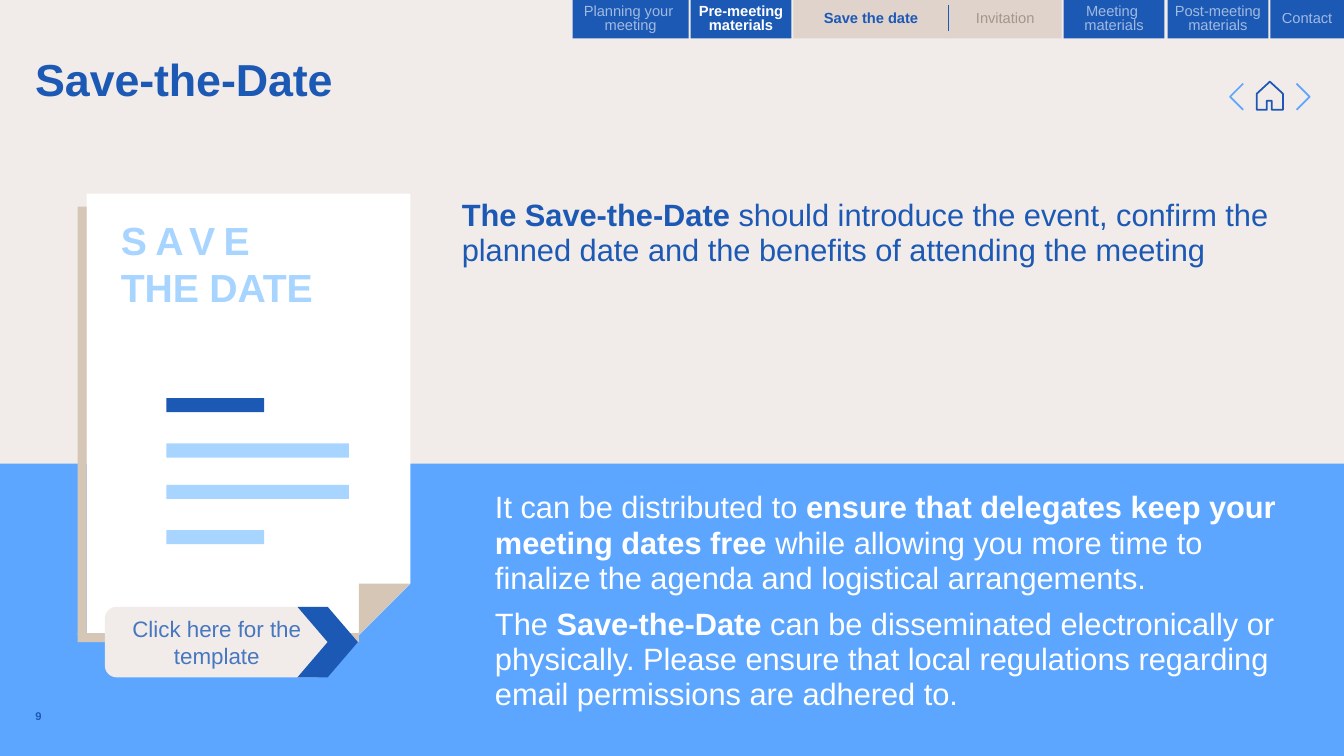
import pptx
import pptx.dml.color
import pptx.enum.shapes
import pptx.enum.text
import pptx.oxml
import pptx.util
import lxml.etree

Inches = pptx.util.Inches
Pt = pptx.util.Pt
RGBColor = pptx.dml.color.RGBColor
Preset = pptx.enum.shapes.MSO_SHAPE
Align = pptx.enum.text.PP_ALIGN
Anchor = pptx.enum.text.MSO_ANCHOR

CREAM = RGBColor(0xF1, 0xEC, 0xE9)
SKY = RGBColor(0x5D, 0xA6, 0xFF)
PALE = RGBColor(0xA8, 0xD5, 0xFF)
NAVY = RGBColor(0x1C, 0x59, 0xB5)
SOFT_NAVY = RGBColor(0x47, 0x77, 0xC0)
SAND = RGBColor(0xD6, 0xC6, 0xB6)
LIGHT_SAND = RGBColor(0xDF, 0xD3, 0xCC)
TAUPE = RGBColor(0xA3, 0x97, 0x8B)
WHITE = RGBColor(0xFF, 0xFF, 0xFF)
FONT = "Arial"


def add_drawing_element(parent, tag, **attributes):
    return lxml.etree.SubElement(parent, pptx.oxml.ns.qn(tag), attributes)


def add_block(slide, preset, box, color):
    shape = slide.shapes.add_shape(preset, *[Inches(value) for value in box])
    shape.shadow.inherit = False
    shape.fill.solid()
    shape.fill.fore_color.rgb = color
    shape.line.fill.background()
    return shape


def add_outline(slide, points, fill=None, line=None):
    """Closed when filled; line only otherwise."""
    corners = [(Inches(x), Inches(y)) for x, y in points]
    builder = slide.shapes.build_freeform(*corners[0])
    builder.add_line_segments(corners[1:], close=fill is not None)
    shape = builder.convert_to_shape()
    shape.shadow.inherit = False
    if fill is None:
        shape.fill.background()
        shape.line.color.rgb = line
        shape.line.width = Pt(1.25)
    else:
        shape.fill.solid()
        shape.fill.fore_color.rgb = fill
        shape.line.fill.background()
    return shape


def add_run(paragraph, text, size, color, bold=False, spacing=None, alpha=None):
    run = paragraph.add_run()
    run.text = text
    run.font.name = FONT
    run.font.size = Pt(size)
    run.font.bold = bold
    run.font.color.rgb = color
    properties = run.font._element
    if spacing is not None:
        properties.set("spc", str(round(spacing * 100)))
    if alpha is not None:
        color_element = properties.find(".//" + pptx.oxml.ns.qn("a:srgbClr"))
        add_drawing_element(color_element, "a:alpha", val=str(alpha * 1000))


def set_margins(frame, horizontal, vertical):
    frame.margin_left = frame.margin_right = Inches(horizontal)
    frame.margin_top = frame.margin_bottom = Inches(vertical)


def add_text(slide, box, paragraphs, size, color, wrap=True, line_spacing=None, before=None):
    """Each paragraph is a list of (text, bold, letter spacing) runs."""
    frame = slide.shapes.add_textbox(*[Inches(value) for value in box]).text_frame
    frame.word_wrap = wrap
    set_margins(frame, 0, 0)
    for index, runs in enumerate(paragraphs):
        paragraph = frame.add_paragraph() if index else frame.paragraphs[0]
        if line_spacing:
            paragraph.line_spacing = line_spacing
        if before:
            paragraph.space_before = Pt(before)
        for text, bold, spacing in runs:
            add_run(paragraph, text, size, color, bold, spacing)


def add_tab(slide, box, lines, fill, color, bold=False, alpha=None):
    tab = add_block(slide, Preset.ROUNDED_RECTANGLE, box, fill)
    tab.adjustments[0] = 0
    frame = tab.text_frame
    frame.word_wrap = True
    frame.vertical_anchor = Anchor.MIDDLE
    set_margins(frame, 0, 0.05)
    for index, line in enumerate(lines):
        paragraph = frame.add_paragraph() if index else frame.paragraphs[0]
        paragraph.alignment = Align.CENTER
        paragraph.line_spacing = 0.8
        add_run(paragraph, line, 10.5, color, bold, alpha=alpha)


def add_navigation_bar(slide, left, top, height):
    # Main sections: offset, width, lines, current
    sections = [
        (0, 1.15, ["Planning your ", "meeting"], False),
        (1.17, 1, ["Pre-meeting", "materials"], True),
        (4.87, 1, ["Meeting ", "materials"], False),
        (5.9, 1, ["Post-meeting", "materials"], False),
        (6.92, 0.73, ["Contact"], False),
    ]
    for offset, width, lines, current in sections:
        add_tab(slide, (left + offset, top, width, height), lines, NAVY, WHITE,
                bold=current, alpha=None if current else 59)

    # Pages of the current section, with a divider
    divider = left + 3.73
    add_tab(slide, (left + 2.19, top, 1.54, height), ["Save the date"], LIGHT_SAND, NAVY, bold=True)
    add_tab(slide, (divider, top, 1.12, height), ["Invitation"], LIGHT_SAND, TAUPE)
    connector = slide.shapes.add_connector(
        pptx.enum.shapes.MSO_CONNECTOR.STRAIGHT,
        Inches(divider), Inches(top + 0.05), Inches(divider), Inches(top + 0.31))
    connector.line.color.rgb = NAVY
    connector.line.width = Pt(1)
    add_drawing_element(connector._element.spPr, "a:effectLst")


def add_page_controls(slide, left, top, width):
    # House
    house = [(0.13, 0), (0.26, 0.12), (0.26, 0.28), (0.15, 0.28), (0.15, 0.19),
             (0.1, 0.19), (0.1, 0.28), (0, 0.28), (0, 0.12), (0.13, 0)]
    house_left = left + width / 2 - 0.13
    add_outline(slide, [(house_left + x, top + y) for x, y in house], line=NAVY)
    # Previous and next arrows
    for tip, direction in ((left, 1), (left + width, -1)):
        add_outline(slide, [(tip + 0.13 * direction, top + 0.02), (tip, top + 0.15),
                            (tip + 0.13 * direction, top + 0.28)], line=SKY)


def add_document(slide, left, top, width, height):
    right, bottom, fold = left + width, top + height, 0.51
    # Page and folded corner
    add_outline(slide, [(right, top), (left, top), (left, bottom), (right - fold, bottom),
                        (right, bottom - fold)], fill=WHITE)
    add_outline(slide, [(right - fold, bottom), (right, bottom - fold),
                        (right - fold, bottom - fold)], fill=SAND)
    # Lines of writing
    for offset, length, color in ((2.03, 0.97, NAVY), (2.48, 1.81, PALE),
                                  (2.89, 1.81, PALE), (3.34, 0.97, PALE)):
        add_block(slide, Preset.RECTANGLE, (left + 0.79, top + offset, length, 0.14), color)
    add_text(slide, (left + 0.34, top + 0.23, 2.47, 1.17),
             [[("SAVE", True, 6)], [("THE DATE", True, -0.1)]], 28, PALE, wrap=False)
    # Sheet behind
    edge = 0.09
    add_block(slide, Preset.RECTANGLE, (left - edge, top + 0.13, edge, height - 0.13), SAND)
    add_block(slide, Preset.RECTANGLE, (left - edge, bottom - 0.02, width - fold + edge, edge), SAND)


def add_template_button(slide, left, top, width, height):
    button = add_block(slide, Preset.ROUNDED_RECTANGLE, (left, top, width - 0.29, height), CREAM)
    frame = button.text_frame
    frame.word_wrap = True
    frame.vertical_anchor = Anchor.MIDDLE
    frame.paragraphs[0].alignment = Align.CENTER
    add_run(frame.paragraphs[0], "Click here for the template", 16, SOFT_NAVY)
    add_block(slide, Preset.CHEVRON, (left + width - 0.6, top, 0.6, height), NAVY)


def add_copy(slide):
    add_text(slide, (0.35, 0.51, 10.67, 1.41), [[("Save-the-Date", True, -0.1)]], 32, NAVY)
    add_text(slide, (4.58, 1.97, 8.29, 0.76), [[
        ("The Save-the-Date ", True, None),
        ("should introduce the event, confirm the planned date and the benefits "
         "of attending the meeting", False, None),
    ]], 22, NAVY, line_spacing=0.95, before=8)
    add_text(slide, (4.91, 4.87, 7.96, 2.63), [[
        ("It can be distributed to ", False, None),
        ("ensure that delegates keep your meeting dates free ", True, None),
        ("while allowing you more time to finalize the agenda and logistical "
         "arrangements.", False, None),
    ], [
        ("The", False, None),
        (" Save-the-Date ", True, None),
        ("can be disseminated electronically or physically. Please ensure that local "
         "regulations regarding email permissions are adhered to.", False, None),
    ]], 22, WHITE, line_spacing=0.95, before=8)
    add_text(slide, (0.35, 7.04, 0.22, 0.2), [[("9", True, None)]], 8, NAVY)


def main():
    presentation = pptx.Presentation()
    presentation.slide_width = Inches(13.33)
    presentation.slide_height = Inches(7.5)
    slide = presentation.slides.add_slide(presentation.slide_layouts[6])
    slide.background.fill.solid()
    slide.background.fill.fore_color.rgb = CREAM

    add_page_controls(slide, 12.2, 0.81, 0.79)
    add_block(slide, Preset.RECTANGLE, (0, 4.6, 13.33, 2.9), SKY)
    add_document(slide, 0.86, 1.92, 3.21, 4.38)
    add_copy(slide)
    add_navigation_bar(slide, 5.68, 0, 0.38)
    add_template_button(slide, 1.04, 6.02, 2.51, 0.7)
    presentation.save("out.pptx")


if __name__ == "__main__":
    main()
